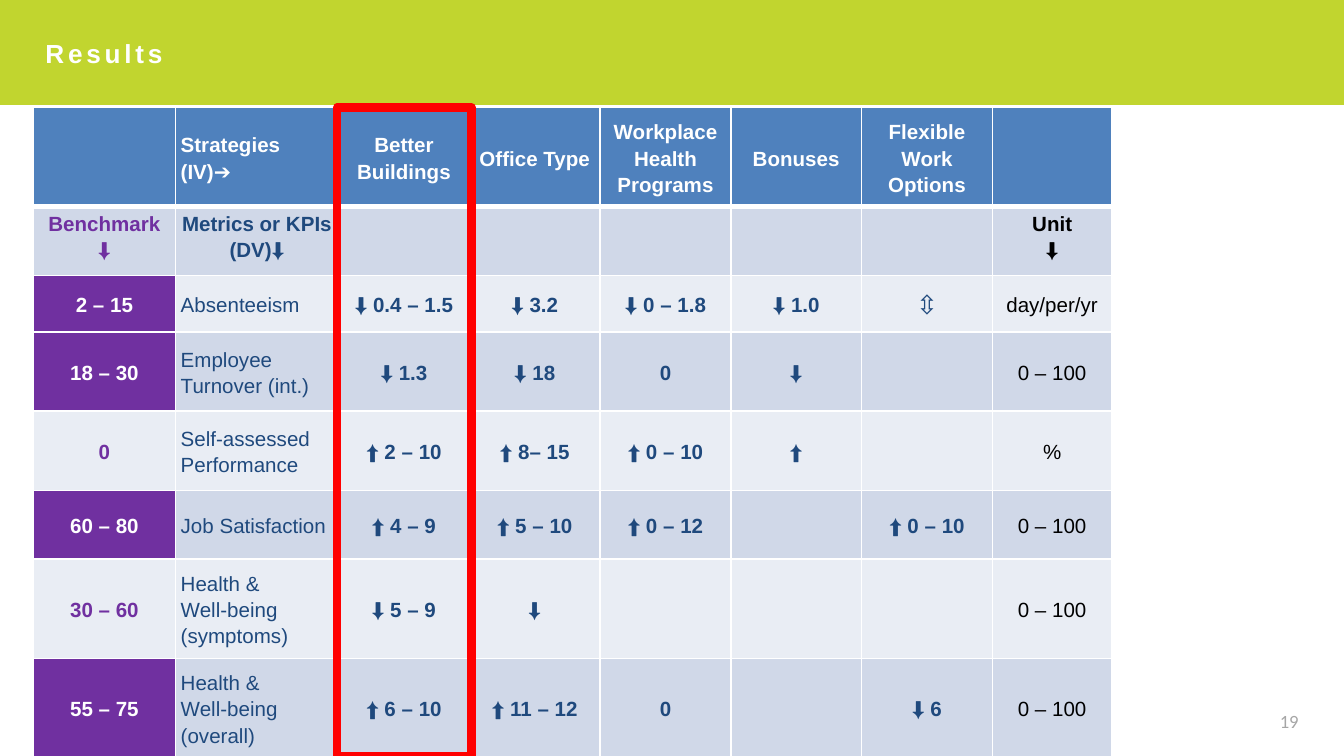
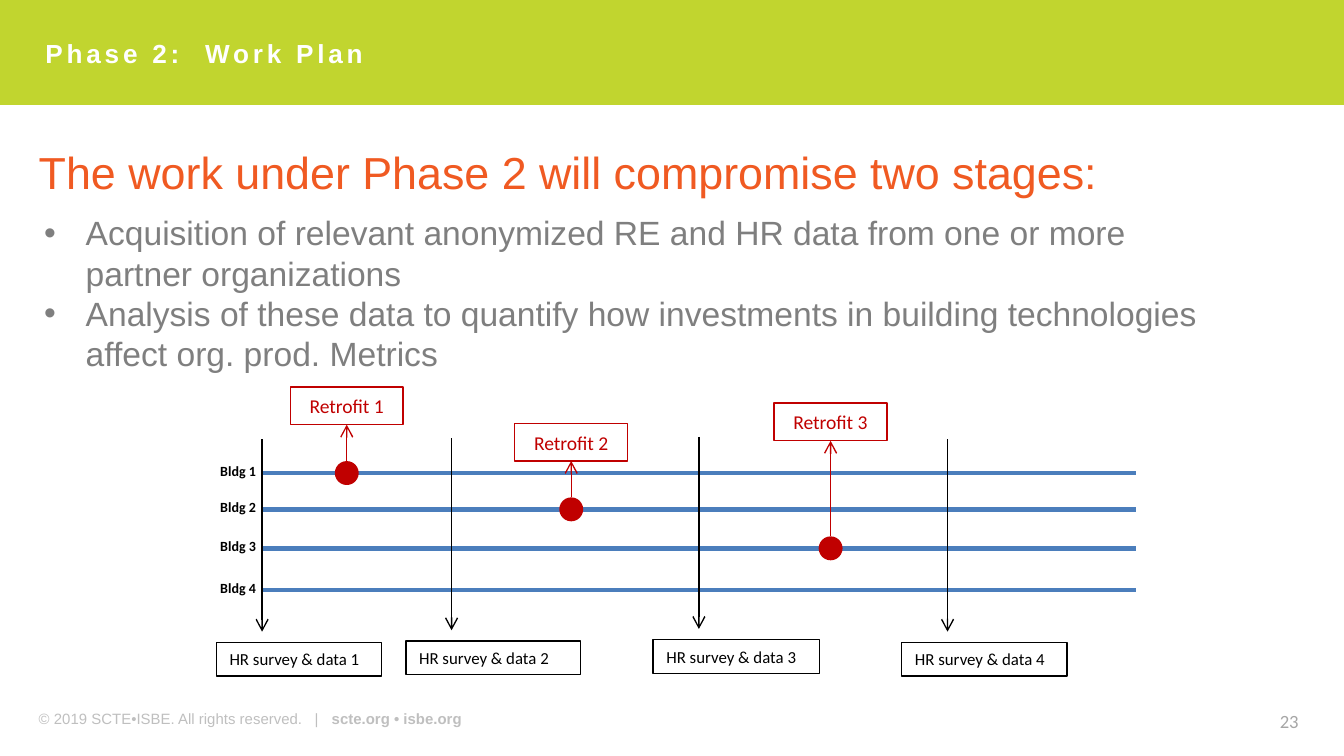
from itertools import groupby

from lxml.etree import SubElement
from pptx import Presentation
from pptx.dml.color import RGBColor
from pptx.enum.shapes import MSO_CONNECTOR, MSO_SHAPE
from pptx.enum.text import MSO_ANCHOR, PP_ALIGN
from pptx.oxml.ns import qn
from pptx.util import Inches, Pt

WIDE, HIGH = Inches(10), Inches(5.625)
COLS, ROWS = 100, 56.25
LEFT, MID, RIGHT = PP_ALIGN.LEFT, PP_ALIGN.CENTER, PP_ALIGN.RIGHT
LIME, ORANGE, BLUE, NAVY = "C1D52F", "F05A22", "4F81BD", "1F497D"
PURPLE, RED, CRIMSON, STEEL = "7030A0", "FF0000", "C00000", "4B7EBC"
WHITE, BLACK, GREY, PALE, DIM = "FFFFFF", "000000", "7F7F7F", "BFBFBF", "A6A6A6"
DARK_ROW, LIGHT_ROW = "D0D8E8", "E9EDF4"
SIGNS = "⬇⬆⇳"


def tint(code):
    return RGBColor.from_string(code)


def put(thing, **form):
    for key, value in form.items():
        setattr(thing, key, value)


class Deck:
    """Hold the shared style and the current slide on a 100 by 56.25 grid."""

    def __init__(self):
        self.show = Presentation()
        put(self.show, slide_width=WIDE, slide_height=HIGH)

    def x(self, cols):
        return round(WIDE * cols / COLS)

    def y(self, rows):
        return round(HIGH * rows / ROWS)

    def spot(self, left, top, width, height):
        return self.x(left), self.y(top), self.x(width), self.y(height)

    def start(self, title, number, footer=False):
        self.slide = self.show.slides.add_slide(self.show.slide_layouts[6])
        self.shape((0, 0, 100, 7.8), fill=LIME)
        if footer:
            line = self.text((1.9, 52.3, 68.6, 2.4),
                             "© 2019 SCTE•ISBE. All rights reserved.   |   ", 8, PALE)
            self.words(line, "scte.org • isbe.org", 8, PALE, bold=True)
        self.text((80.4, 52.3, 17.2, 2.7), number, 10, DIM, RIGHT, name="Calibri")
        head = self.text((2.4, 2.3, 67.7, 4), title, 14, WHITE, bold=True)
        for run in head.runs:
            run._r.get_or_add_rPr().set("spc", "200")

    def words(self, para, text, size, color, name="Arial", bold=False):
        for index, part in enumerate(text.split("\n")):
            if index:
                para.add_line_break()
            if part:
                run = para.add_run()
                run.text = part
                put(run.font, size=Pt(size), name=name, bold=bold)
                run.font.color.rgb = tint(color)

    def text(self, place, text, size, color, align=LEFT, **look):
        frame = self.slide.shapes.add_textbox(*self.spot(*place)).text_frame
        frame.word_wrap = True
        para = frame.paragraphs[0]
        para.alignment = align
        self.words(para, text, size, color, **look)
        return para

    def list(self, place, items, size, color):
        frame = self.slide.shapes.add_textbox(*self.spot(*place)).text_frame
        frame.word_wrap = True
        for index, item in enumerate(items):
            para = frame.add_paragraph() if index else frame.paragraphs[0]
            prop = para._p.get_or_add_pPr()
            prop.set("marL", str(self.x(3.1)))
            prop.set("indent", str(-self.x(3.1)))
            SubElement(prop, qn("a:buFont"), typeface="Arial")
            SubElement(prop, qn("a:buChar"), char="•")
            self.words(para, item, size, color)

    def shape(self, place, kind=MSO_SHAPE.RECTANGLE, fill=None, edge=None, weight=0.75):
        item = self.slide.shapes.add_shape(kind, *self.spot(*place))
        item.shadow.inherit = False
        if fill:
            item.fill.solid()
            item.fill.fore_color.rgb = tint(fill)
        else:
            item.fill.background()
        if edge:
            item.line.color.rgb = tint(edge)
            item.line.width = Pt(weight)
        else:
            item.line.fill.background()
        return item

    def label(self, place, text, size, color, align):
        frame = self.shape(place, edge=color).text_frame
        put(frame, word_wrap=True, vertical_anchor=MSO_ANCHOR.MIDDLE)
        frame.paragraphs[0].alignment = align
        self.words(frame.paragraphs[0], text, size, color, name="Calibri")

    def line(self, start, end, color, weight=0.75, arrow=True):
        item = self.slide.shapes.add_connector(
            MSO_CONNECTOR.STRAIGHT, self.x(start[0]), self.y(start[1]),
            self.x(end[0]), self.y(end[1]))
        item.line.color.rgb = tint(color)
        item.line.width = Pt(weight)
        prop = item._element.spPr
        if arrow:
            SubElement(prop.find(qn("a:ln")), qn("a:tailEnd"), type="arrow")
        SubElement(prop, qn("a:effectLst"))

    def cell(self, cell, text, fill, color, bold, align, anchor, rims):
        prop = cell._tc.get_or_add_tcPr()
        for side, weight in rims.items():
            rim = SubElement(prop, qn(f"a:ln{side}"), w=str(Pt(weight)))
            SubElement(SubElement(rim, qn("a:solidFill")), qn("a:srgbClr"), val=WHITE)
        put(cell, margin_left=self.x(0.4), margin_right=self.x(0.4),
            margin_top=self.y(0.2), margin_bottom=self.y(0.2), vertical_anchor=anchor)
        cell.fill.solid()
        cell.fill.fore_color.rgb = tint(fill)
        para = cell.text_frame.paragraphs[0]
        put(para, alignment=align, line_spacing=1.15)
        for sign, chars in groupby(text, lambda char: char in SIGNS):
            part = "".join(chars)
            self.words(para, part, 14 if part == "⇳" else 11, color, bold=bold and not sign)

    def table(self, place, widths, heights, data):
        grid = self.slide.shapes.add_table(len(data), len(widths), *self.spot(*place)).table
        for column, width in zip(grid.columns, widths):
            column.width = self.x(width)
        for row, height in zip(grid.rows, heights):
            row.height = self.y(height)
        last = len(widths) - 1
        for r, row in enumerate(data):
            rims = {"L": 1, "R": 1, "T": 3 if r == 1 else 1, "B": 1 if r else 3}
            anchor = MSO_ANCHOR.TOP if r == 1 else MSO_ANCHOR.MIDDLE
            for c, text in enumerate(row):
                fill = LIGHT_ROW if r % 2 == 0 else DARK_ROW
                color = {0: PURPLE, last: BLACK}.get(c, NAVY)
                if r == 0:
                    fill, color = BLUE, WHITE
                elif c == 0 and r > 1 and text not in PLAIN:
                    fill, color = PURPLE, WHITE
                bold = r < 2 or c not in (1, last)
                align = LEFT if c == 1 and r != 1 else MID
                self.cell(grid.cell(r, c), text, fill, color, bold, align, anchor, rims)


PLAIN = ("0", "30 – 60")
WIDTHS = [10.55, 12.15] + [9.73] * 5 + [8.9]
HEIGHTS = [7.4, 5.1, 4.2, 5.9, 5.9, 5.1, 7.4, 7.4]
DATA = [
    ["", "Strategies (IV)➔", "Better Buildings", "Office Type",
     "Workplace Health Programs", "Bonuses", "Flexible Work Options", ""],
    ["Benchmark\n⬇", "Metrics or KPIs (DV)⬇", "", "", "", "", "", "Unit\n⬇"],
    ["2 – 15", "Absenteeism", "⬇ 0.4 – 1.5", "⬇ 3.2", "⬇ 0 – 1.8", "⬇ 1.0", "⇳", "day/per/yr"],
    ["18 – 30", "Employee Turnover (int.)", "⬇ 1.3", "⬇ 18", "0", "⬇", "", "0 – 100"],
    ["0", "Self-assessed Performance", "⬆ 2 – 10", "⬆ 8– 15", "⬆ 0 – 10", "⬆", "", "%"],
    ["60 – 80", "Job Satisfaction", "⬆ 4 – 9", "⬆ 5 – 10", "⬆ 0 – 12", "", "⬆ 0 – 10", "0 – 100"],
    ["30 – 60", "Health &\nWell-being (symptoms)", "⬇ 5 – 9", "⬇", "", "", "", "0 – 100"],
    ["55 – 75", "Health &\nWell-being (overall)", "⬆ 6 – 10", "⬆ 11 – 12", "0", "", "⬇ 6", "0 – 100"],
]
STAGES = [
    "Acquisition of relevant anonymized RE and HR data from one or more partner organizations",
    "Analysis of these data to quantify how investments in building technologies "
    "affect org. prod. Metrics",
]
TRACKS = [35.2, 37.9, 40.8, 43.9]
SURVEYS = [(19.5, 47.8, 12.3), (33.6, 47.7, 13), (52, 47.6, 12.4), (70.5, 47.8, 12.3)]
FIXES = [(25.8, 28.8), (42.5, 31.5), (61.8, 30)]


def results(deck):
    deck.start("Results", "19")
    deck.table((2.5, 8, sum(WIDTHS), sum(HEIGHTS)), WIDTHS, HEIGHTS, DATA)
    deck.shape((25.1, 8, 10, 48.25), edge=RED, weight=4.5)


def plan(deck):
    deck.start("Phase 2:  Work Plan", "23", footer=True)
    deck.text((1.9, 10.3, 95.7, 5.5),
              "The work under Phase 2 will compromise two stages:", 24, ORANGE)
    for count, track in enumerate(TRACKS, 1):
        deck.text((15.4, track - 1.3, 5, 2.3), f"Bldg {count}", 7.5, BLACK,
                  name="Calibri", bold=True)
        deck.line((19.5, track), (84.5, track), STEEL, 2.5, arrow=False)
    for count, (x, top, width) in enumerate(SURVEYS, 1):
        deck.line((x, top - 15.1), (x, top - 0.8), BLACK)
        deck.label((x - 3.4, top, width, 2.5), f"HR survey & data {count}", 9, BLACK, LEFT)
    for count, ((x, top), track) in enumerate(zip(FIXES, TRACKS), 1):
        deck.shape((x - 0.75, track - 0.75, 1.5, 1.5), MSO_SHAPE.OVAL, CRIMSON, CRIMSON, 2)
        deck.line((x, track - 0.9), (x, top + 2.8), CRIMSON)
        deck.label((x - 4.2, top, 8.4, 2.8), f"Retrofit {count}", 10.5, CRIMSON, MID)
    deck.list((2.3, 15.3, 90.7, 13.1), STAGES, 18, GREY)


def main():
    deck = Deck()
    results(deck)
    plan(deck)
    deck.show.save("out.pptx")


if __name__ == "__main__":
    main()
